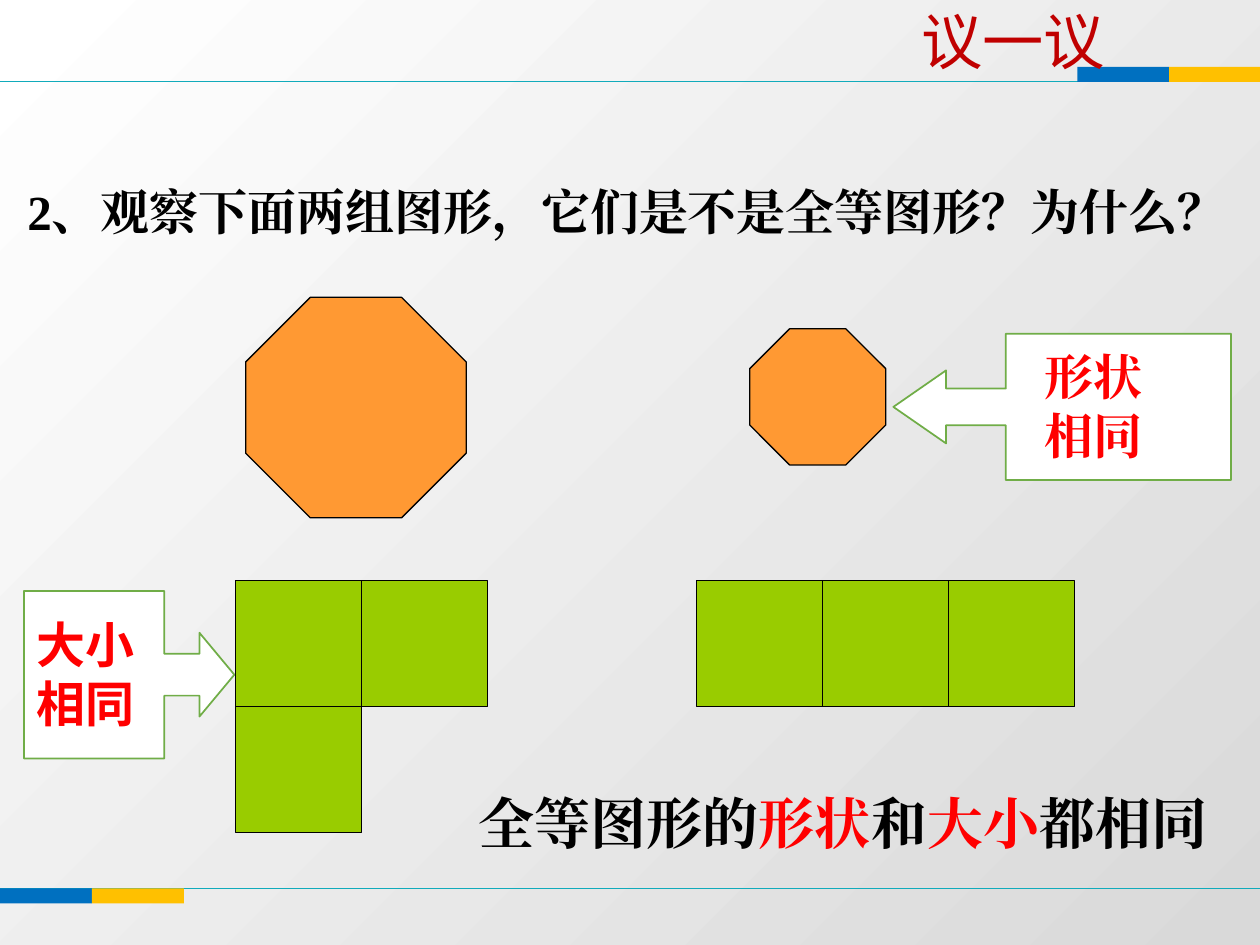
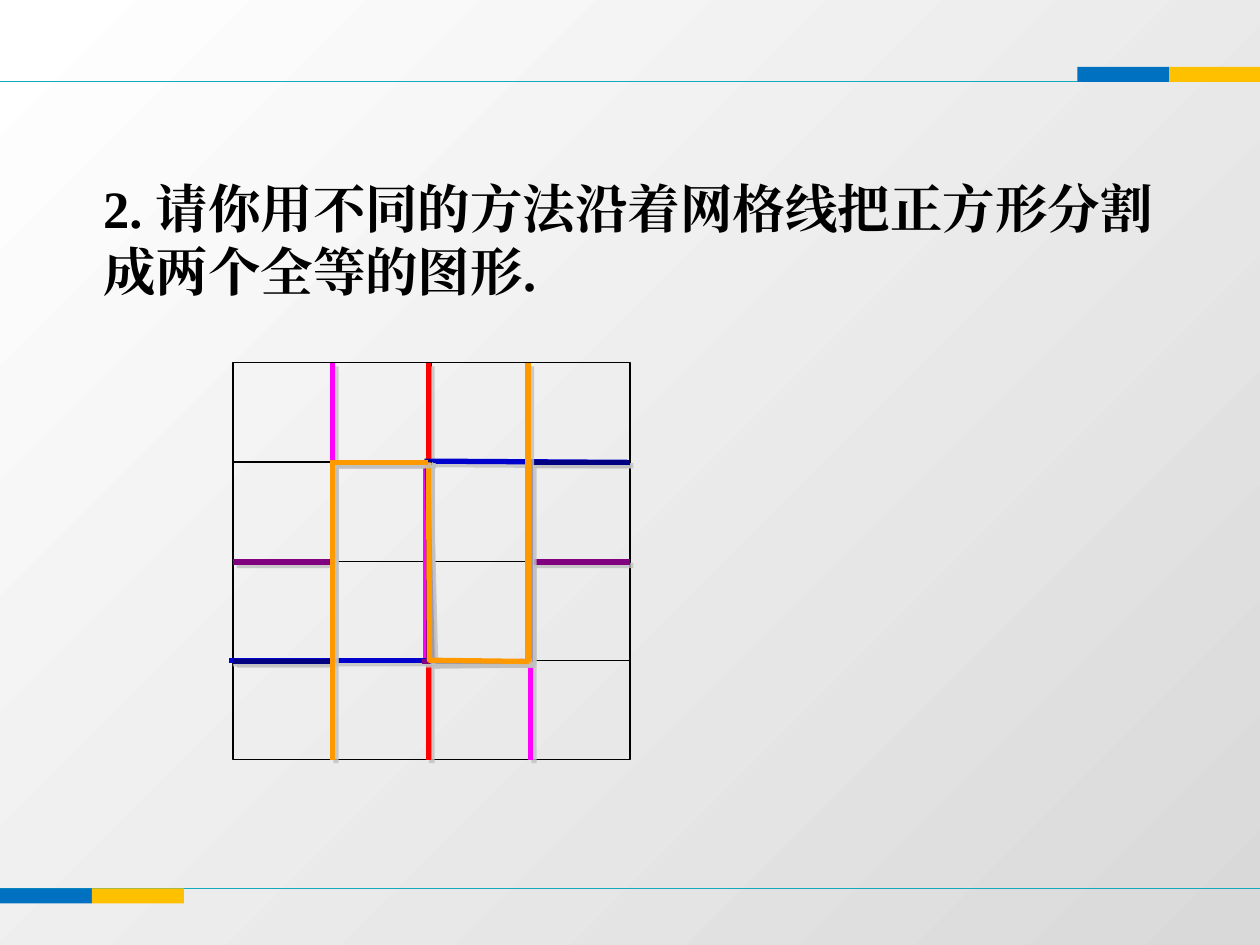
"""Build two geometry slides about congruent figures."""
from itertools import pairwise, product

from lxml.etree import SubElement
from pptx import Presentation
from pptx.dml.color import RGBColor
from pptx.enum.shapes import MSO_CONNECTOR, MSO_SHAPE
from pptx.enum.text import MSO_ANCHOR, PP_ALIGN
from pptx.oxml.ns import qn
from pptx.util import Inches, Pt

COLORS = {
    "black": "000000", "white": "FFFFFF", "grey": "D9D9D9", "shadow": "C0C0C0",
    "teal": "11ABBB", "band blue": "0070C0", "band gold": "FFC000",
    "title": "C00000", "red": "FF0000", "callout": "70AD47",
    "octagon": "FF9933", "square": "99CC00", "magenta": "FF00FF",
    "blue": "0000CC", "purple": "800080", "navy": "000080", "orange": "FF9900",
}
SERIF, SANS, TITLE_FONT = "Times New Roman", "Arial", "Noto Sans CJK SC"

RULES = [0.65, 7.05]
BAND_WIDTH, BAND_HEIGHT = 0.73, 0.12
BANDS = [(8.55, 0.53), (0, 7.05)]

TITLE = "议一议"
QUESTION = "2、观察下面两组图形，它们是不是全等图形？为什么？"
CONCLUSION = [("全等图形的", "black"), ("形状", "red"), ("和", "black"),
              ("大小", "red"), ("都相同", "black")]
CALLOUTS = [
    (MSO_SHAPE.LEFT_ARROW_CALLOUT, (7.09, 2.65, 2.68, 1.16), 0.361,
     ["形状", "相同"], (8.19, 2.7, 1.09, 1.04), SERIF),
    (MSO_SHAPE.RIGHT_ARROW_CALLOUT, (0.19, 4.69, 1.67, 1.33), 0.208,
     ["大小", "相同"], (0.19, 4.83, 1.1, 1.04), SANS),
]
OCTAGONS = [(1.95, 2.36, 1.75), (5.95, 2.61, 1.08)]
SQUARE_FIGURES = [
    (1.87, 4.61, [(0, 0), (1, 0), (0, 1)]),
    (5.53, 4.61, [(0, 0), (1, 0), (2, 0)]),
]

TASK = "2. 请你用不同的方法沿着网格线把正方形分割成两个全等的图形."
GRID_LEFT, GRID_TOP, GRID_SIZE, GRID_COUNT = 1.85, 2.88, 3.15, 4
CUTS = [
    ("red", [[(3.4, 2.88), (3.4, 6.03)]]),
    ("magenta", [[(2.64, 2.88), (2.64, 3.67), (3.43, 3.67)],
                 [(3.38, 3.67), (3.38, 5.25)],
                 [(3.41, 5.26), (4.21, 5.25), (4.21, 6.03)]]),
    ("blue", [[(3.4, 3.67), (3.4, 5.25)],
              [(3.39, 5.24), (1.82, 5.24)],
              [(3.41, 3.66), (4.98, 3.67)]]),
    ("purple", [[(3.4, 5.25), (3.4, 3.67)],
                [(3.43, 3.67), (2.64, 3.67), (2.64, 4.46), (1.85, 4.46)],
                [(3.35, 5.25), (4.21, 5.25), (4.21, 4.46), (5, 4.46)]]),
    ("navy", [[(3.43, 5.25), (3.39, 3.64)],
              [(3.43, 3.67), (2.64, 3.67), (2.64, 5.25), (1.85, 5.25)],
              [(3.43, 5.25), (4.21, 5.25), (4.21, 3.67), (5, 3.67)]]),
    ("orange", [[(3.41, 5.25), (3.4, 3.67), (2.62, 3.67)],
                [(2.64, 6.03), (2.64, 3.67)],
                [(3.4, 5.24), (4.22, 5.25)],
                [(4.19, 2.88), (4.19, 5.25)]]),
]


def color(name):
    return RGBColor.from_string(COLORS[name])


def add_figure(slide, kind, box, fill=None, line=None, weight=0.75):
    shape = slide.shapes.add_shape(kind, *map(Inches, box))
    shape.shadow.inherit = False
    if fill:
        shape.fill.solid()
        shape.fill.fore_color.rgb = color(fill)
    else:
        shape.fill.background()
    if line:
        shape.line.color.rgb = color(line)
        shape.line.width = Pt(weight)
    else:
        shape.line.fill.background()
    return shape


def add_line(shapes, start, end, line, weight, shadow=False):
    connector = shapes.add_connector(
        MSO_CONNECTOR.STRAIGHT, *map(Inches, (*start, *end)))
    connector.line.color.rgb = color(line)
    connector.line.width = Pt(weight)
    effects = SubElement(connector._element.spPr, qn("a:effectLst"))
    if shadow:
        outer = SubElement(effects, qn("a:outerShdw"), blurRad="0",
                           dist=str(Pt(2.8)), dir="2700000", algn="ctr", rotWithShape="0")
        tint = SubElement(outer, qn("a:srgbClr"), val=COLORS["shadow"])
        SubElement(tint, qn("a:alpha"), val="80000")


def add_text(slide, box, paragraphs, size, font=SERIF, bold=True,
             align=PP_ALIGN.LEFT, anchor=MSO_ANCHOR.TOP):
    frame = slide.shapes.add_textbox(*map(Inches, box)).text_frame
    frame.word_wrap = True
    frame.vertical_anchor = anchor
    for index, runs in enumerate(paragraphs):
        paragraph = frame.add_paragraph() if index else frame.paragraphs[0]
        paragraph.alignment = align
        for text, tone in runs:
            run = paragraph.add_run()
            run.text = text
            run.font.size = Pt(size)
            run.font.bold = bold
            run.font.name = font
            run.font.color.rgb = color(tone)
            SubElement(run._r.get_or_add_rPr(), qn("a:ea"), typeface=font)


def add_framed_slide(presentation):
    slide = presentation.slides.add_slide(presentation.slide_layouts[6])
    fill = slide.background.fill
    fill.gradient()
    fill.gradient_angle = 315
    for stop, position, tone in zip(fill.gradient_stops, (0.01, 1), ("white", "grey")):
        stop.position = position
        stop.color.rgb = color(tone)
    for y in RULES:
        add_line(slide.shapes, (0, y), (10, y), "teal", 0.5)
    for left, top in BANDS:
        for index, tone in enumerate(("band blue", "band gold")):
            box = (left + index * BAND_WIDTH, top, BAND_WIDTH, BAND_HEIGHT)
            add_figure(slide, MSO_SHAPE.RECTANGLE, box, tone)
    return slide


def build_discussion(presentation):
    slide = add_framed_slide(presentation)
    add_text(slide, (3.7, 6.21, 6.92, 0.64), [CONCLUSION], 32)
    for kind, box, head, words, text_box, font in CALLOUTS:
        callout = add_figure(slide, kind, box, "white", "callout", 1)
        for index, value in enumerate((0.25, 0.25, head, 0.667)):
            callout.adjustments[index] = value
        add_text(slide, text_box, [[(word, "red")] for word in words], 28, font)
    for left, top, size in OCTAGONS:
        octagon = add_figure(slide, MSO_SHAPE.OCTAGON, (left, top, size, size),
                             "octagon", "black")
        octagon.adjustments[0] = 0.293
    for left, top, cells in SQUARE_FIGURES:
        for column, row in cells:
            add_figure(slide, MSO_SHAPE.RECTANGLE, (left + column, top + row, 1, 1),
                       "square", "black")
    add_text(slide, (0.12, 1.39, 10, 0.57), [[(QUESTION, "black")]], 28)
    add_text(slide, (6.78, -0.03, 2.52, 0.69), [[(TITLE, "title")]], 35, TITLE_FONT,
             False, PP_ALIGN.CENTER, MSO_ANCHOR.MIDDLE)


def build_grid_cuts(presentation):
    slide = add_framed_slide(presentation)
    add_text(slide, (0.72, 1.35, 8.67, 1.11), [[(TASK, "black")]], 30)
    cell = GRID_SIZE / GRID_COUNT
    for row, column in product(range(GRID_COUNT), repeat=2):
        box = (GRID_LEFT + column * cell, GRID_TOP + row * cell, cell, cell)
        add_figure(slide, MSO_SHAPE.RECTANGLE, box, line="black")
    for tone, polylines in CUTS:
        group = slide.shapes.add_group_shape()
        for points in polylines:
            for start, end in pairwise(points):
                add_line(group.shapes, start, end, tone, 3, shadow=True)


def main():
    presentation = Presentation()
    presentation.slide_width, presentation.slide_height = Inches(10), Inches(7.5)
    build_discussion(presentation)
    build_grid_cuts(presentation)
    presentation.save("out.pptx")


if __name__ == "__main__":
    main()
